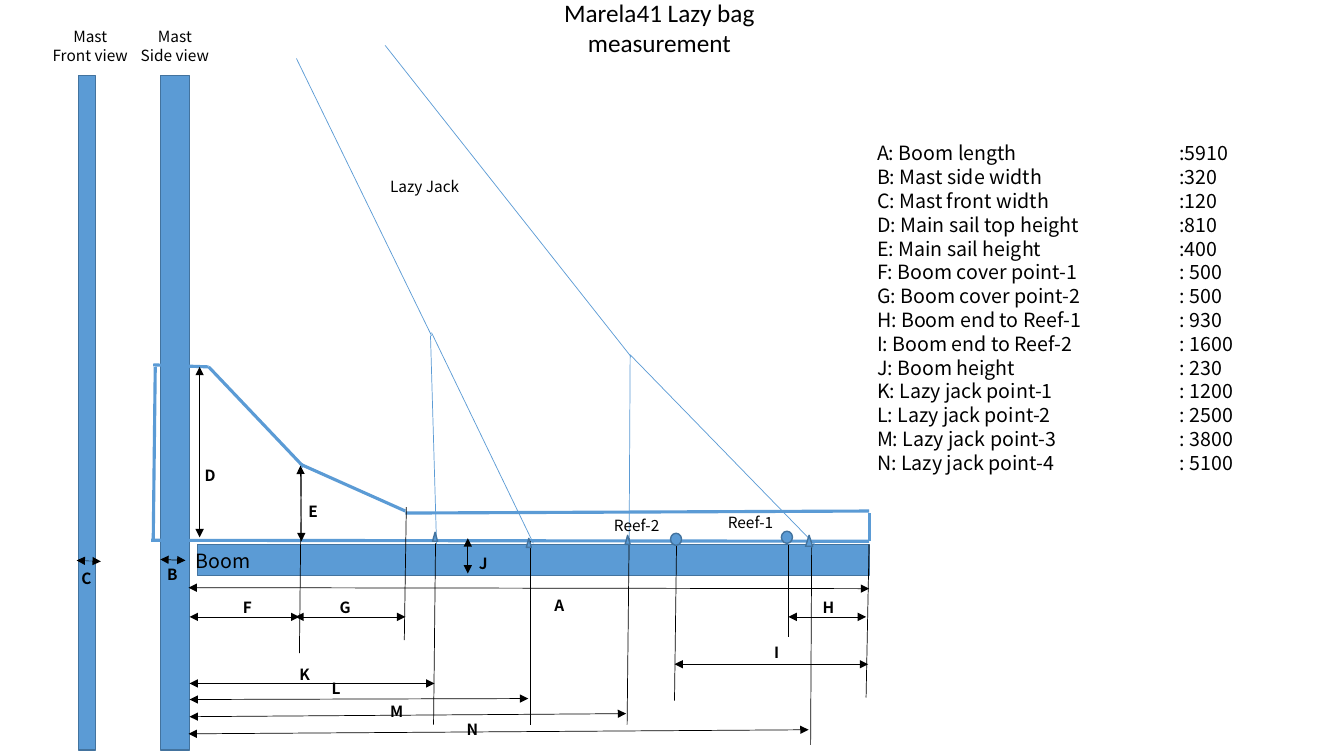
"""Build a one-slide boom and lazy bag measurement drawing."""
from dataclasses import dataclass

from lxml.etree import SubElement
from pptx import Presentation
from pptx.dml.color import RGBColor
from pptx.enum.shapes import MSO_CONNECTOR as Connector, MSO_SHAPE as Preset
from pptx.enum.text import MSO_ANCHOR as Anchor, PP_ALIGN as Align
from pptx.oxml.ns import qn
from pptx.slide import Slide
from pptx.text.text import TextFrame
from pptx.util import Inches, Length, Pt

COLUMNS, ROWS = 1333, 750
CELL = Inches(0.01)
BLUE, EDGE, BLACK = "5B9BD5", "43739E", "000000"
LABEL_FONT, TITLE_FONT = "Noto Sans CJK JP", "Calibri"
LINE_FACTOR = 1.215
VALUE_COLUMN = 300

Point = tuple[int, int]
Area = tuple[int, int, int, int]


@dataclass(frozen=True)
class Solid:
    preset: Preset
    area: Area


@dataclass(frozen=True)
class Stroke:
    start: Point
    end: Point
    color: str = BLACK
    weight: float = 0.5
    arrows: bool = False


@dataclass(frozen=True)
class Label:
    text: str
    area: Area
    size: int = 11
    align: Align = Align.LEFT
    bold: bool = False


@dataclass(frozen=True)
class Dimension:
    letter: str
    start: Point
    end: Point
    label: Point
    weight: float = 0.5


SPARS = [
    Solid(Preset.RECTANGLE, (159, 75, 29, 669)),
    Solid(Preset.RECTANGLE, (78, 75, 17, 669)),
    Solid(Preset.RECTANGLE, (196, 540, 666, 31)),
]
FITTINGS = [
    Solid(Preset.OVAL, (775, 527, 11, 12)),
    Solid(Preset.OVAL, (665, 529, 11, 12)),
    Solid(Preset.ISOSCELES_TRIANGLE, (799, 531, 7, 11)),
    Solid(Preset.ISOSCELES_TRIANGLE, (620, 531, 5, 9)),
    Solid(Preset.ISOSCELES_TRIANGLE, (522, 534, 5, 9)),
    Solid(Preset.ISOSCELES_TRIANGLE, (429, 528, 5, 9)),
]
BAG_EDGES = [
    ((207, 364), (152, 362)), ((154, 364), (152, 537)), ((207, 364), (301, 463)),
    ((299, 461), (402, 507)), ((402, 509), (862, 507)), ((862, 509), (862, 537)),
    ((862, 537), (150, 536)),
]
LAZY_JACKS = [
    ((294, 58), (428, 333)), ((427, 333), (433, 540)), ((428, 330), (529, 539)),
    ((382, 45), (626, 354)), ((625, 352), (624, 537)), ((625, 352), (808, 540)),
]
EXTENSIONS = [
    ((782, 541), (782, 632)), ((671, 541), (669, 695)), ((862, 540), (859, 692)),
    ((299, 465), (297, 648)), ((403, 503), (401, 635)), ((432, 539), (430, 719)),
    ((526, 537), (526, 719)), ((624, 534), (622, 719)), ((805, 543), (804, 739)),
]
DIMENSIONS = [
    Dimension("A", (862, 584), (187, 583), (540, 586)),
    Dimension("B", (184, 556), (159, 555), (156, 556)),
    Dimension("C", (100, 557), (76, 556), (71, 559), 0.25),
    Dimension("D", (198, 364), (198, 533), (193, 457)),
    Dimension("E", (298, 462), (299, 537), (296, 493)),
    Dimension("F", (297, 612), (188, 612), (231, 588)),
    Dimension("G", (402, 612), (293, 612), (327, 588)),
    Dimension("H", (859, 612), (782, 612), (806, 588)),
    Dimension("I", (861, 659), (669, 659), (758, 633)),
    Dimension("J", (464, 534), (464, 569), (465, 545)),
    Dimension("K", (431, 678), (188, 678), (287, 655)),
    Dimension("L", (524, 693), (188, 694), (319, 669)),
    Dimension("M", (621, 708), (188, 711), (377, 691)),
    Dimension("N", (802, 724), (187, 728), (453, 709)),
]
LABELS = [
    Label("Mast\nSide view", (113, 22, 121, 47), align=Align.CENTER),
    Label("Mast\nFront view", (29, 22, 121, 47), align=Align.CENTER),
    Label("Boom", (184, 539, 117, 34), 14),
    Label("Lazy Jack", (377, 171, 99, 29)),
    Label("Reef-1", (712, 504, 99, 29)),
    Label("Reef-2", (599, 507, 99, 29)),
]
MEASUREMENTS = [
    ("A: Boom length", ":5910"), ("B: Mast side width", ":320"),
    ("C: Mast front width", ":120"), ("D: Main sail top height", ":810"),
    ("E: Main sail height", ":400"), ("F: Boom cover point-1", ": 500"),
    ("G: Boom cover point-2", ": 500"), ("H: Boom end to Reef-1", ": 930"),
    ("I: Boom end to Reef-2", ": 1600"), ("J: Boom height", ": 230"),
    ("K: Lazy jack point-1", ": 1200"), ("L: Lazy jack point-2", ": 2500"),
    ("M: Lazy jack point-3", ": 3800"), ("N: Lazy jack point-4", ": 5100"),
]


def rgb(color: str) -> RGBColor:
    return RGBColor.from_string(color)


def cells(values: tuple[int, ...]) -> list[Length]:
    return [Length(value * CELL) for value in values]


def format_runs(frame: TextFrame, font: str, size: int, bold: bool = False) -> None:
    for para in frame.paragraphs:
        for span in para.runs:
            span.font.name = font
            span.font.size = Pt(size)
            span.font.bold = bold
            span.font.color.rgb = rgb(BLACK)


def draw_solid(page: Slide, solid: Solid) -> None:
    shape = page.shapes.add_shape(solid.preset, *cells(solid.area))
    shape.shadow.inherit = False
    shape.fill.solid()
    shape.fill.fore_color.rgb = rgb(BLUE)
    shape.line.color.rgb = rgb(EDGE)
    shape.line.width = Pt(1)


def draw_stroke(page: Slide, stroke: Stroke) -> None:
    line = page.shapes.add_connector(Connector.STRAIGHT, *cells(stroke.start + stroke.end))
    line.line.color.rgb = rgb(stroke.color)
    line.line.width = Pt(stroke.weight)
    if stroke.arrows:
        outline = line.line._get_or_add_ln()
        for end in ("a:headEnd", "a:tailEnd"):
            SubElement(outline, qn(end), type="triangle")
    SubElement(line._element.spPr, qn("a:effectLst"))


def draw_label(page: Slide, label: Label) -> TextFrame:
    frame = page.shapes.add_textbox(*cells(label.area)).text_frame
    frame.word_wrap = True
    frame.text = label.text
    for para in frame.paragraphs:
        para.alignment = label.align
        para.line_spacing = Pt(label.size * LINE_FACTOR)
    format_runs(frame, LABEL_FONT, label.size, label.bold)
    return frame


def draw_dimension(page: Slide, item: Dimension) -> None:
    draw_stroke(page, Stroke(item.start, item.end, weight=item.weight, arrows=True))
    draw_label(page, Label(item.letter, (*item.label, 32, 29), bold=True))


def draw_measurements(page: Slide) -> None:
    text = "\n".join(f"{name}\t{value}" for name, value in MEASUREMENTS)
    frame = draw_label(page, Label(text, (860, 135, 431, 364), 14))
    for para in frame.paragraphs:
        tabs = SubElement(para._p.get_or_add_pPr(), qn("a:tabLst"))
        SubElement(tabs, qn("a:tab"), pos=str(VALUE_COLUMN * CELL), algn="l")


def draw_title(page: Slide) -> None:
    title = page.shapes.title
    title.left, title.top, title.width, title.height = cells((476, 7, 356, 40))
    frame = title.text_frame
    frame.text = "Marela41 Lazy bag measurement"
    frame.word_wrap = False
    frame.vertical_anchor = Anchor.MIDDLE
    frame.paragraphs[0].alignment = Align.CENTER
    format_runs(frame, TITLE_FONT, 18)


def main() -> None:
    deck = Presentation()
    deck.slide_width, deck.slide_height = cells((COLUMNS, ROWS))
    page = deck.slides.add_slide(deck.slide_layouts.get_by_name("Title Only"))
    draw_title(page)
    for spar in SPARS:
        draw_solid(page, spar)
    for lines, color, weight in ((BAG_EDGES, BLUE, 2.25), (LAZY_JACKS, BLUE, 0.5), (EXTENSIONS, BLACK, 0.5)):
        for start, end in lines:
            draw_stroke(page, Stroke(start, end, color, weight))
    for fitting in FITTINGS:
        draw_solid(page, fitting)
    for item in DIMENSIONS:
        draw_dimension(page, item)
    for label in LABELS:
        draw_label(page, label)
    draw_measurements(page)
    deck.save("out.pptx")


if __name__ == "__main__":
    main()
